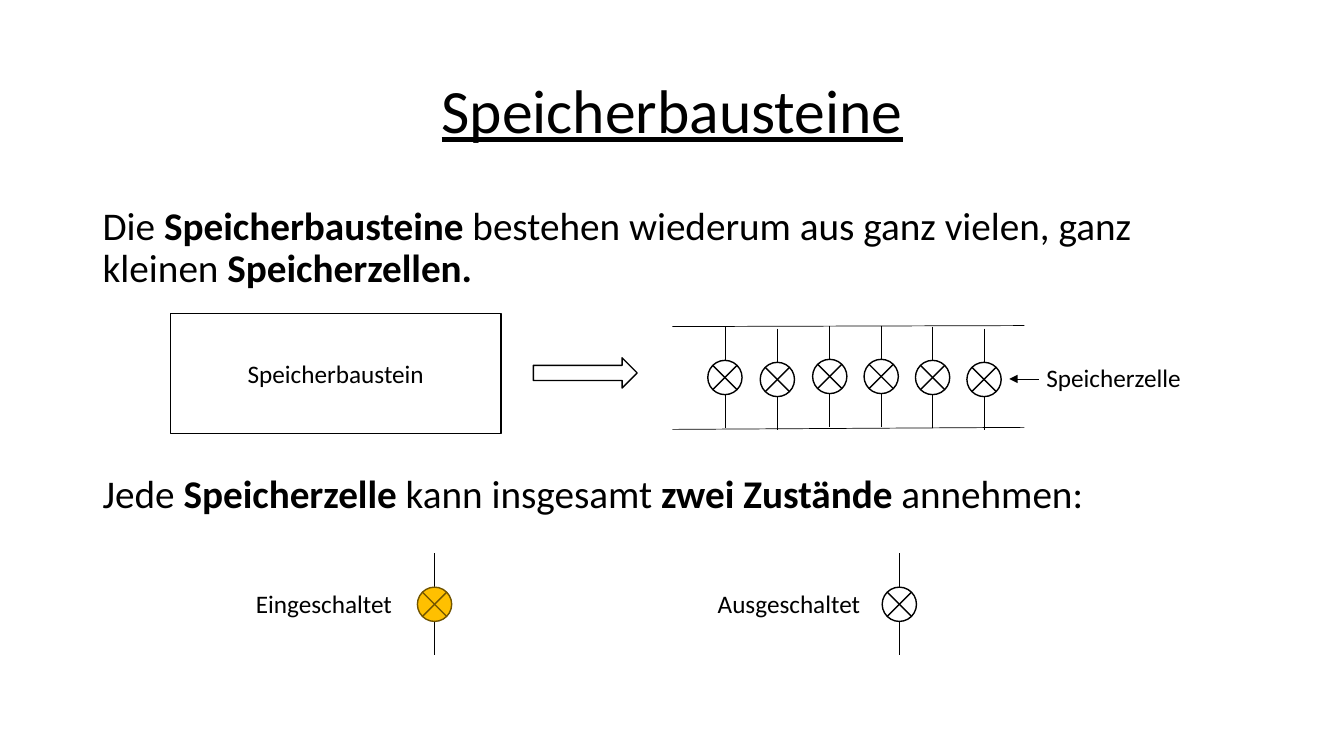
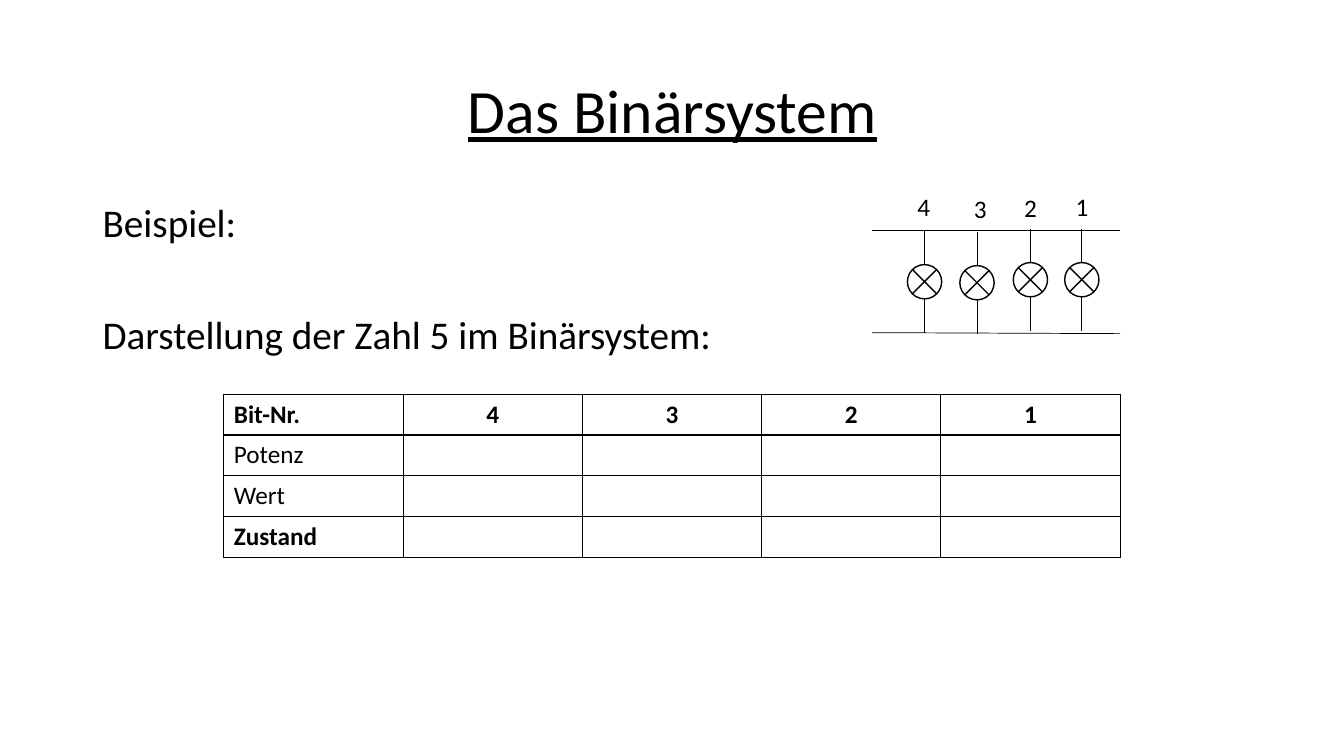
from lxml import etree
from pptx import Presentation
from pptx import util as u
from pptx.dml import color
from pptx.enum import shapes, text
from pptx.oxml import ns

INK, PAPER, GLOW, RUST = "000000", "FFFFFF", "FFC000", "705400"
FONT = "Calibri"
SIDE, WIDE = 0.92, 11.5
BULB, WIRE = 0.34, 0.335
LEFT, MID = text.PP_ALIGN.LEFT, text.PP_ALIGN.CENTER


def rgb(code):
    return color.RGBColor.from_string(code)


def box(at):
    return [u.Inches(n) for n in at]


def node(dad, tag, **attrs):
    return etree.SubElement(dad, ns.qn(tag), attrs)


def write(para, runs, size=18, align=LEFT, under=False):
    para.alignment = align
    for words, bold in runs:
        run = para.add_run()
        run.text = words
        font = run.font
        font.name, font.size, font.bold = FONT, u.Pt(size), bold
        font.color.rgb = rgb(INK)
        if under:
            font.underline = True


def title(slide, words):
    head = slide.shapes.title
    head.left, head.top, head.width, head.height = box((SIDE, 0.4, WIDE, 1.45))
    frame = head.text_frame
    frame.vertical_anchor = text.MSO_ANCHOR.MIDDLE
    para = frame.paragraphs[0]
    para.line_spacing = 0.9
    write(para, [(words, False)], 44, MID, True)


def body(slide, top, high, paras, gap):
    frame = slide.shapes.add_textbox(*box((SIDE, top, WIDE, high))).text_frame
    frame.word_wrap = True
    for i, runs in enumerate(paras):
        para = frame.add_paragraph() if i else frame.paragraphs[0]
        para.line_spacing = 0.9
        para.space_before = u.Pt(gap if i else 0)
        write(para, runs, 28)


def label(slide, words, x, y, wide):
    frame = slide.shapes.add_textbox(*box((x, y, wide, 0.4))).text_frame
    frame.word_wrap = False
    write(frame.paragraphs[0], [(words, False)])


def line(slide, start, end, arrow=False):
    wire = slide.shapes.add_connector(
        shapes.MSO_CONNECTOR.STRAIGHT, *box(start + end))
    wire.line.color.rgb = rgb(INK)
    wire.line.width = u.Pt(0.5)
    props = wire.line._get_or_add_ln()
    if arrow:
        node(props, "a:tailEnd", type="triangle")
    node(props.getparent(), "a:effectLst")


def shape(slide, kind, at, fill=PAPER, edge=INK):
    form = slide.shapes.add_shape(kind, *box(at))
    form.shadow.inherit = False
    form.fill.solid()
    form.fill.fore_color.rgb = rgb(fill)
    form.line.color.rgb = rgb(edge)
    form.line.width = u.Pt(1)
    return form


def lamp(slide, x, y, fill=PAPER, edge=INK):
    low = y + WIRE + BULB
    for top in (y, low):
        line(slide, (x, top), (x, top + WIRE))
    shape(slide, shapes.MSO_SHAPE.FLOWCHART_SUMMING_JUNCTION,
          (x - BULB / 2, y + WIRE, BULB, BULB), fill, edge)


def rails(slide, ends, pairs, lamps):
    for first, last in pairs:
        line(slide, (ends[0], first), (ends[1], last))
    for x, y in lamps:
        lamp(slide, x, y)


def edges(cell):
    props = cell._tc.get_or_add_tcPr()
    for i, side in enumerate(("L", "R", "T", "B")):
        edge = etree.Element(ns.qn("a:ln" + side), {"w": str(u.Pt(1))})
        fill = node(edge, "a:solidFill")
        node(fill, "a:srgbClr", val=INK)
        props.insert(i, edge)


def table(slide, at, rows):
    grid = slide.shapes.add_table(len(rows), len(rows[0]), *box(at)).table
    grid.first_row = grid.horz_banding = False
    for r, row in enumerate(rows):
        for c, words in enumerate(row):
            cell = grid.cell(r, c)
            cell.fill.background()
            edges(cell)
            para = cell.text_frame.paragraphs[0]
            para.font.size = u.Pt(18)
            if c:
                cell.vertical_anchor = text.MSO_ANCHOR.MIDDLE
            if words:
                write(para, [(words, r in (0, len(rows) - 1))],
                      align=MID if c else LEFT)


def memory(slide):
    title(slide, "Speicherbausteine")
    body(slide, 2, 3.27, [
        [("Die ", False), ("Speicherbausteine", True),
         (" bestehen wiederum aus ganz vielen, ganz kleinen ", False),
         ("Speicherzellen.", True)],
        [("Jede ", False), ("Speicherzelle", True),
         (" kann insgesamt ", False), ("zwei Zustände ", True),
         ("annehmen:", False)]], 131)
    lamp(slide, 8.92, 5.49)
    lamp(slide, 4.31, 5.49, GLOW, RUST)
    block = shape(slide, shapes.MSO_SHAPE.RECTANGLE, (1.69, 3.11, 3.28, 1.19))
    block.text_frame.vertical_anchor = text.MSO_ANCHOR.MIDDLE
    write(block.text_frame.paragraphs[0], [("Speicherbaustein", False)],
          align=MID)
    shape(slide, shapes.MSO_SHAPE.RIGHT_ARROW, (5.29, 3.55, 1.03, 0.3))
    label(slide, "Eingeschaltet", 2.44, 5.79, 1.57)
    label(slide, "Ausgeschaltet", 7.02, 5.79, 1.63)
    rails(slide, (6.67, 10.16), [(3.24, 3.23), (4.26, 4.24)],
          [(7.19, 3.24), (7.71, 3.26), (8.23, 3.23),
           (8.74, 3.23), (9.25, 3.24), (9.76, 3.26)])
    label(slide, "Speicherzelle", 10.28, 3.55, 1.55)
    line(slide, (10.3, 3.76), (10.01, 3.76), True)


def binary(slide):
    title(slide, "Das Binärsystem")
    body(slide, 1.97, 5.01, [
        [("Beispiel:", False)],
        [("Darstellung der Zahl 5 im Binärsystem:", False)]], 50)
    bits = ["4", "3", "2", "1"]
    blank = [""] * len(bits)
    table(slide, (2.22, 3.91, 8.89, 1.62), [
        ["Bit-Nr."] + bits, ["Potenz"] + blank,
        ["Wert"] + blank, ["Zustand"] + blank])
    rails(slide, (8.65, 11.11), [(2.29, 2.29), (3.3, 3.31)],
          [(9.17, 2.29), (9.69, 2.3), (10.22, 2.27), (10.73, 2.27)])
    spots = [(9, 1.85), (9.56, 1.87), (10.06, 1.86), (10.57, 1.85)]
    for bit, (x, y) in zip(bits, spots):
        label(slide, bit, x, y, 0.33)


def main():
    deck = Presentation()
    deck.slide_width, deck.slide_height = box((13.33, 7.5))
    for draw in (memory, binary):
        draw(deck.slides.add_slide(deck.slide_layouts[5]))
    deck.save("out.pptx")


if __name__ == "__main__":
    main()
